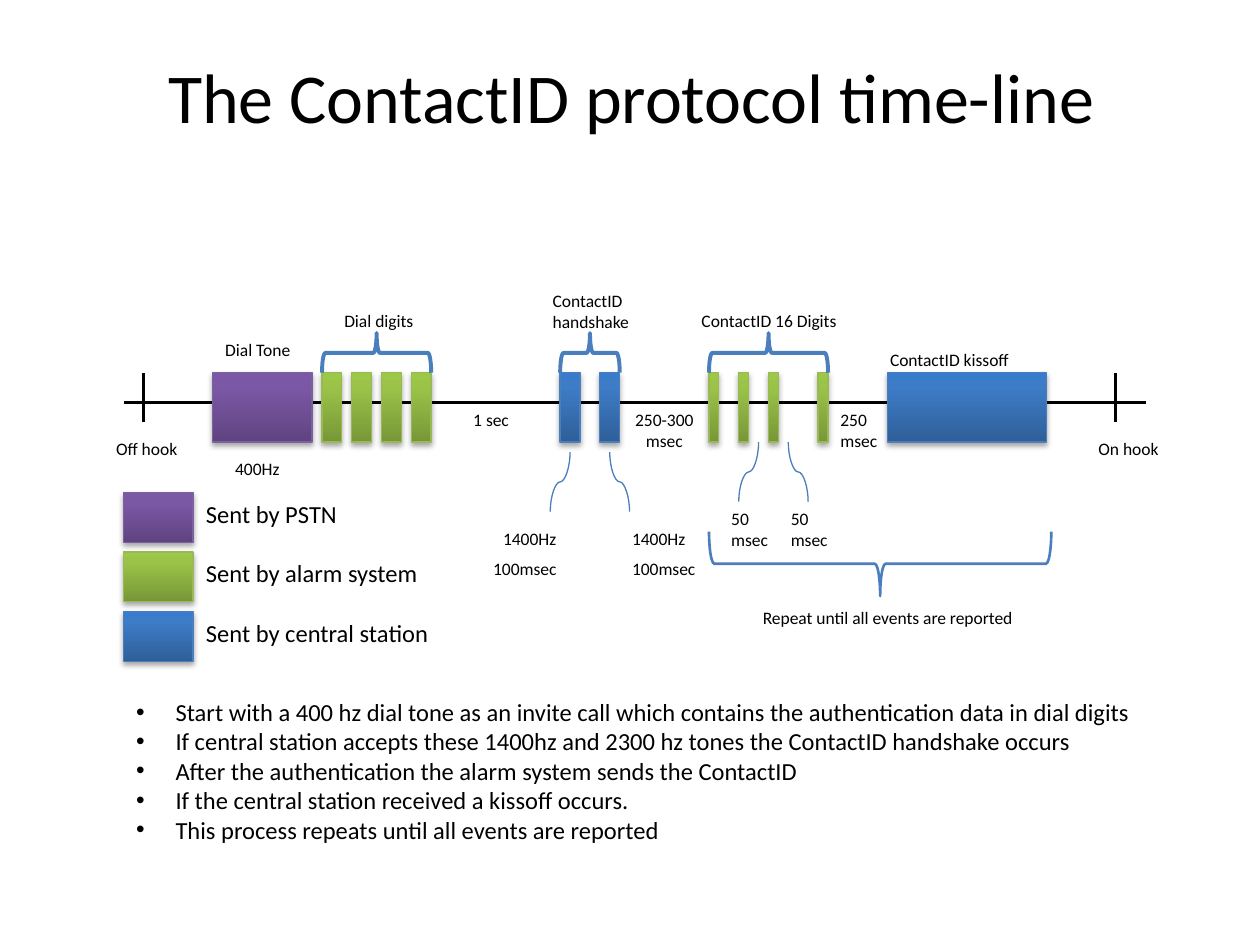
from copy import deepcopy

from lxml import etree
from pptx import Presentation
from pptx.dml.color import RGBColor
from pptx.enum.shapes import MSO_CONNECTOR, MSO_SHAPE
from pptx.enum.text import MSO_ANCHOR, MSO_AUTO_SIZE, PP_ALIGN
from pptx.oxml.ns import qn
from pptx.util import Pt

RECTANGLE, LEFT_BRACE, RIGHT_BRACE = MSO_SHAPE.RECTANGLE, MSO_SHAPE.LEFT_BRACE, MSO_SHAPE.RIGHT_BRACE
STRAIGHT, CURVE = MSO_CONNECTOR.STRAIGHT, MSO_CONNECTOR.CURVE
LEFT, CENTER = PP_ALIGN.LEFT, PP_ALIGN.CENTER
TOP, MIDDLE = MSO_ANCHOR.TOP, MSO_ANCHOR.MIDDLE
NO_AUTOFIT, GROW = MSO_AUTO_SIZE.NONE, MSO_AUTO_SIZE.SHAPE_TO_FIT_TEXT

FONT = "Calibri"
BLACK, BLUE = "000000", "4B7EBC"
PSTN = ("5F4480", "7B58A6", "7C57A8", "7D60A0")
ALARM = ("779737", "9BC348", "9DC746", "98B955")
STATION = ("2F5F99", "3D7CC7", "3A7CCB", BLUE)
STOPS = (0, 0.8, 1)
GRID = 5.67

BARS = [
    (9, 10, PSTN),
    *[(x, 2, ALARM) for x in range(20, 30, 3)],
    *[(x, 2, STATION) for x in (44, 48)],
    *[(x, 1, ALARM) for x in (59, 62, 65, 70)],
    (77, 16, STATION),
]
BRACES = [(20, 11), (44, 6), (59, 12)]
LEADERS = [(45, 17, 43), (49, 17, 51), (64, 16, 62), (67, 16, 69)]
LABELS = [
    ("Off hook", -2, 15, 10, LEFT),
    ("On hook", 97, 15, 9, LEFT),
    ("Dial Tone", 9, 5, 12, LEFT),
    ("400Hz", 10, 17, 9, LEFT),
    ("Dial digits", 21, 2, 14, LEFT),
    ("1 sec", 34, 12, 8, LEFT),
    ("ContactID handshake", 42, 0, 11, LEFT),
    ("250-300\vmsec", 50, 12, 9, CENTER),
    ("ContactID 16 Digits", 57, 2, 17, LEFT),
    ("250 msec", 71, 12, 8, LEFT),
    ("ContactID kissoff", 76, 6, 18, LEFT),
    ("50\vmsec", 60, 22, 7, LEFT),
    ("50\vmsec", 66, 22, 7, LEFT),
    ("1400Hz", 37, 24, 8, LEFT),
    ("1400Hz", 50, 24, 8, LEFT),
    ("100msec", 36, 27, 9, LEFT),
    ("100msec", 50, 27, 9, LEFT),
    ("Repeat until all events are reported", 63, 32, 28, CENTER),
]
LEGEND = [
    ("Sent by PSTN", PSTN),
    ("Sent by alarm system", ALARM),
    ("Sent by central station", STATION),
]
STEPS = [
    "Start with a 400 hz dial tone as an invite call which contains the authentication data in dial digits",
    "If central station accepts these 1400hz and 2300 hz tones the ContactID handshake occurs",
    "After the authentication the alarm system sends the ContactID",
    "If the central station received a kissoff occurs.",
    "This process repeats until all events are reported",
]


def color(value):
    """Turn a hex string into a colour."""
    return RGBColor.from_string(value)


def place(shape, left, top, width, height):
    """Put a shape at a box given in points."""
    shape.left, shape.top, shape.width, shape.height = map(Pt, (left, top, width, height))


def format_paragraph(paragraph, size, alignment):
    """Set the font and alignment of a paragraph."""
    paragraph.alignment = alignment
    paragraph.font.name = FONT
    paragraph.font.size = Pt(size)
    paragraph.font.color.rgb = color(BLACK)


def add_label(slide, text, left, top, width, height, size, alignment=LEFT):
    """Add a wrapped text box."""
    shape = slide.shapes.add_textbox(Pt(left), Pt(top), Pt(width), Pt(height))
    frame = shape.text_frame
    frame.word_wrap = True
    frame.auto_size = GROW
    frame.text = text
    format_paragraph(frame.paragraphs[0], size, alignment)


def add_block(slide, left, top, width, height, palette):
    """Add a shaded rectangle with a soft shadow."""
    shape = slide.shapes.add_shape(RECTANGLE, Pt(left), Pt(top), Pt(width), Pt(height))
    shape.fill.gradient()
    shape.fill.gradient_angle = 90
    stop_list = shape._element.spPr.find(qn("a:gradFill")).find(qn("a:gsLst"))
    stop_list.append(deepcopy(stop_list[-1]))
    for stop, position, value in zip(shape.fill.gradient_stops, STOPS, palette):
        stop.position = position
        stop.color.rgb = color(value)
    shape.line.color.rgb = color(palette[-1])
    shape.line.width = Pt(0.75)
    shape.shadow.inherit = False
    effects = shape._element.spPr.find(qn("a:effectLst"))
    shadow = etree.SubElement(effects, qn("a:outerShdw"), blurRad="40000", dist="23000",
                              dir="5400000", rotWithShape="0")
    shade = etree.SubElement(shadow, qn("a:srgbClr"), val=BLACK)
    etree.SubElement(shade, qn("a:alpha"), val="35000")


def add_brace(slide, kind, left, top, width, height, weight):
    """Add a brace turned by a quarter so that it fills the given box."""
    shape = slide.shapes.add_shape(kind, Pt(left + (width - height) / 2), Pt(top + (height - width) / 2),
                                   Pt(height), Pt(width))
    shape.rotation = 90
    shape.fill.background()
    shape.line.color.rgb = color(BLUE)
    shape.line.width = Pt(weight)
    shape.shadow.inherit = False


def add_line(slide, kind, start, end, value, weight):
    """Add a connector between two points."""
    connector = slide.shapes.add_connector(kind, *map(Pt, (*start, *end)))
    connector.line.color.rgb = color(value)
    connector.line.width = Pt(weight)
    etree.SubElement(connector._element.spPr, qn("a:effectLst"))
    return connector


def add_leader(slide, start, end):
    """Add a curve that leaves and arrives vertically."""
    (x1, y1), (x2, y2) = start, end
    middle_x, middle_y = (x1 + x2) / 2, (y1 + y2) / 2
    half_length, half_depth = (y2 - y1) / 2, abs(x2 - x1) / 2
    side = 1 if x2 > x1 else -1
    connector = add_line(slide, CURVE,
                         (middle_x + side * half_length, middle_y - half_depth),
                         (middle_x - side * half_length, middle_y + half_depth), BLUE, 0.75)
    frame = connector._element.spPr.find(qn("a:xfrm"))
    frame.set("rot", "16200000" if side > 0 else "5400000")


def add_title(slide, left, top, width, height):
    """Fill the title placeholder."""
    title = slide.shapes.title
    place(title, left, top, width, height)
    title.text_frame.text = "The ContactID protocol time-line"
    title.text_frame.vertical_anchor = MIDDLE
    title.text_frame.auto_size = NO_AUTOFIT
    format_paragraph(title.text_frame.paragraphs[0], 40, CENTER)


def add_timeline(slide, left, top):
    """Draw the signal time-line on its grid."""
    def point(column, row):
        """Give the position of a grid point."""
        return left + column * GRID, top + row * GRID

    add_line(slide, STRAIGHT, point(0, 12), point(103, 12), BLACK, 1.5)
    for column in (2, 100):
        add_line(slide, STRAIGHT, point(column, 9), point(column, 14), BLACK, 1.5)
    for column, width, palette in BARS:
        add_block(slide, *point(column, 9), width * GRID, 7 * GRID, palette)
    for column, width in BRACES:
        add_brace(slide, LEFT_BRACE, *point(column, 5), width * GRID, 4 * GRID, 2.25)
    add_brace(slide, RIGHT_BRACE, *point(59, 25), 34.5 * GRID, 6.5 * GRID, 1.5)
    for start, row, end in LEADERS:
        add_leader(slide, point(start, row), point(end, row + 6))
    for text, column, row, width, alignment in LABELS:
        add_label(slide, text, *point(column, row), width * GRID, 19.4, 10, alignment)


def add_legend(slide, left, top):
    """Explain the block colours."""
    for index, (text, palette) in enumerate(LEGEND):
        row_top = top + index * 6 * GRID
        add_block(slide, left, row_top, 7 * GRID, 5 * GRID, palette)
        add_label(slide, text, left + 40, row_top, 164, 24.5, 14)


def add_steps(slide, left, top, width, height):
    """Fill the body placeholder with the bulleted steps."""
    body = slide.placeholders[1]
    place(body, left, top, width, height)
    frame = body.text_frame
    frame.text = "\n".join(STEPS)
    frame.vertical_anchor = TOP
    frame.auto_size = NO_AUTOFIT
    for paragraph in frame.paragraphs:
        properties = paragraph._p.get_or_add_pPr()
        properties.set("marL", str(Pt(22.5)))
        properties.set("indent", str(Pt(-22.5)))
        paragraph.space_before = Pt(0)
        etree.SubElement(properties, qn("a:buFont"), typeface="Arial")
        etree.SubElement(properties, qn("a:buChar"), char="•")
        format_paragraph(paragraph, 14, LEFT)


def main():
    """Build and save the slide."""
    presentation = Presentation()
    presentation.slide_width, presentation.slide_height = Pt(720), Pt(540)
    slide = presentation.slides.add_slide(presentation.slide_layouts[1])
    add_title(slide, 36.7, 9.4, 648, 90)
    add_timeline(slide, 70.6, 162)
    add_legend(slide, 70.6, 281.5)
    add_steps(slide, 70.6, 394.6, 617.8, 92.2)
    presentation.save("out.pptx")


if __name__ == "__main__":
    main()
